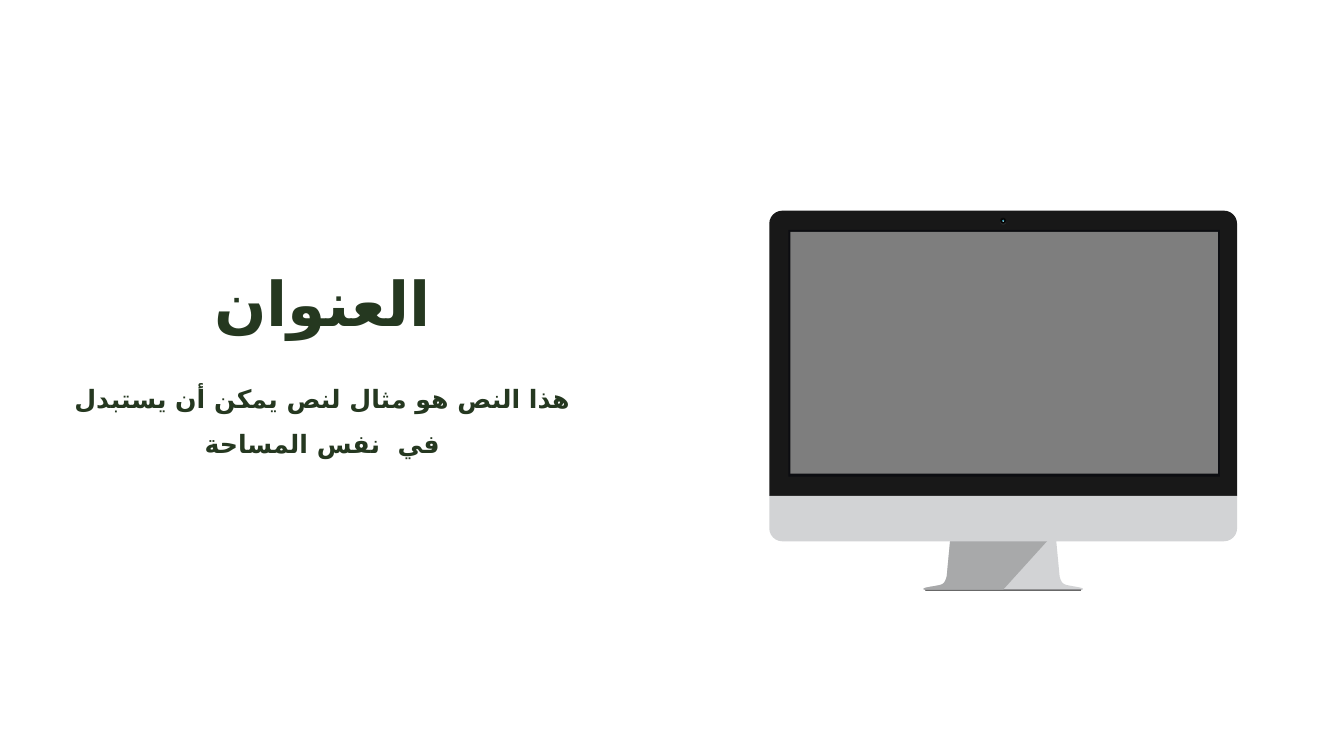
import dataclasses
import typing

import pptx
import pptx.dml.color
import pptx.enum.shapes
import pptx.enum.text
import pptx.oxml
import pptx.oxml.ns
import pptx.util

Inches = pptx.util.Inches
Pt = pptx.util.Pt
MSO_SHAPE = pptx.enum.shapes.MSO_SHAPE
ANCHOR = pptx.enum.text.MSO_ANCHOR
Point = typing.Tuple[float, float]


@dataclasses.dataclass(frozen=True)
class Theme:
    font: str = "Lato"
    arabic_font: str = "DejaVu Sans"
    title_size: int = 44
    body_size: int = 18
    text: str = "253820"
    case: str = "181818"
    edge: str = "0C0D11"
    screen: str = "7E7E7E"
    metal: str = "D2D3D5"
    shade: str = "A8A9AA"
    lens: tuple = ("2C2C2C", "0A0A0A", "000000", "2C99B4", "FFFFFF")


@dataclasses.dataclass(frozen=True)
class Part:
    kind: typing.Any
    box: typing.Tuple[float, float, float, float]
    color: str
    adjustments: typing.Tuple[float, ...] = ()


@dataclasses.dataclass(frozen=True)
class Outline:
    points: typing.List[Point]
    color: str


@dataclasses.dataclass(frozen=True)
class Label:
    text: str
    box: typing.Tuple[float, float, float, float]
    size: int
    anchor: typing.Any
    line_spacing: float


THEME = Theme()
CENTER = 9.95
CORNER = 0.13


def curve(a: Point, b: Point, c: Point, d: Point, steps: int = 8) -> typing.List[Point]:
    points = []
    for i in range(1, steps + 1):
        t = i / steps
        weights = ((1 - t) ** 3, 3 * t * (1 - t) ** 2, 3 * t * t * (1 - t), t ** 3)
        points.append(tuple(sum(w * q[k] for w, q in zip(weights, (a, b, c, d)))
                            for k in (0, 1)))
    return points


def mirrored(half: typing.List[Point]) -> typing.List[Point]:
    return half + [(2 * CENTER - x, y) for x, y in reversed(half)]


def lens_part(size: float, y: float, color: str) -> Part:
    return Part(MSO_SHAPE.OVAL, (CENTER - size / 2, y, size, size), color)


def paint(sp, color: str) -> None:
    sp.shadow.inherit = False
    sp.fill.solid()
    sp.fill.fore_color.rgb = pptx.dml.color.RGBColor.from_string(color)
    sp.line.fill.background()


def draw_part(shapes, part: Part) -> None:
    sp = shapes.add_shape(part.kind, *map(Inches, part.box))
    for i, value in enumerate(part.adjustments):
        sp.adjustments[i] = value
    paint(sp, part.color)


def draw_outline(shapes, outline: Outline) -> None:
    points = [(Inches(x), Inches(y)) for x, y in outline.points]
    builder = shapes.build_freeform(*points[0])
    builder.add_line_segments(points[1:], close=True)
    paint(builder.convert_to_shape(), outline.color)


def write_label(sp, label: Label) -> None:
    for name, value in zip(("left", "top", "width", "height"), label.box):
        setattr(sp, name, Inches(value))
    tf = sp.text_frame
    tf.text = label.text
    p = tf.paragraphs[0]
    r = p.runs[0]
    formats = (
        (tf, {"word_wrap": True, "vertical_anchor": label.anchor,
              "auto_size": pptx.enum.text.MSO_AUTO_SIZE.NONE}),
        (p, {"alignment": pptx.enum.text.PP_ALIGN.CENTER,
             "line_spacing": label.line_spacing}),
        (r.font, {"name": THEME.font, "size": Pt(label.size), "bold": True}),
        (r.font.color, {"rgb": pptx.dml.color.RGBColor.from_string(THEME.text)}),
    )
    for target, values in formats:
        for name, value in values.items():
            setattr(target, name, value)
    cs = pptx.oxml.parse_xml(
        f'<a:cs {pptx.oxml.ns.nsdecls("a")} typeface="{THEME.arabic_font}"/>')
    r.font._element.append(cs)


def monitor() -> typing.List[typing.Union[Part, Outline]]:
    bend = (9.39, 5.72)
    ankle = (9.29, 5.81)
    toe = (9.16, 5.84)
    leg = [(9.43, 5.30), bend,
           *curve(bend, (9.37, 5.80), (9.34, 5.80), ankle),
           *curve(ankle, (9.24, 5.82), (9.16, 5.83), toe),
           (9.16, 5.85)]
    foot = [(9.85, 5.80), (9.85, 5.81), (9.17, 5.84), (9.18, 5.86), (9.21, 5.86)]
    lens = zip((0.06, 0.06, 0.04, 0.02, 0.01),
               (2.17, 2.16, 2.17, 2.18, 2.19), THEME.lens)
    rounded = MSO_SHAPE.ROUND_2_SAME_RECTANGLE
    return [
        Part(rounded, (7.63, 2.09, 4.64, 2.83), THEME.case, (CORNER / 2.83, 0)),
        Part(MSO_SHAPE.RECTANGLE, (7.82, 2.28, 4.28, 2.45), THEME.edge),
        Part(MSO_SHAPE.RECTANGLE, (7.84, 2.30, 4.24, 2.40), THEME.screen),
        Outline(mirrored(foot), THEME.case),
        Outline(mirrored(leg), THEME.metal),
        *(lens_part(*values) for values in lens),
        Outline(leg + [(CENTER, 5.85), (10.43, 5.32)], THEME.shade),
        Part(rounded, (7.63, 4.92, 4.64, 0.45), THEME.metal, (0, CORNER / 0.45)),
    ]


def main() -> None:
    prs = pptx.Presentation()
    prs.slide_width = Inches(13.33)
    prs.slide_height = Inches(7.5)
    s = prs.slides.add_slide(prs.slide_layouts[5])

    group = s.shapes.add_group_shape()
    for item in monitor():
        draw = draw_part if isinstance(item, Part) else draw_outline
        draw(group.shapes, item)

    title = Label("العنوان", (1.16, 2.57, 4.08, 0.84),
                  THEME.title_size, ANCHOR.BOTTOM, 1.0)
    body = Label("هذا النص هو مثال لنص يمكن أن يستبدل في  نفس المساحة",
                 (0.59, 3.6, 5.21, 0.97), THEME.body_size, ANCHOR.TOP, 1.5)
    write_label(s.shapes.title, title)
    write_label(s.shapes.add_textbox(*map(Inches, body.box)), body)
    prs.save("out.pptx")


if __name__ == "__main__":
    main()
